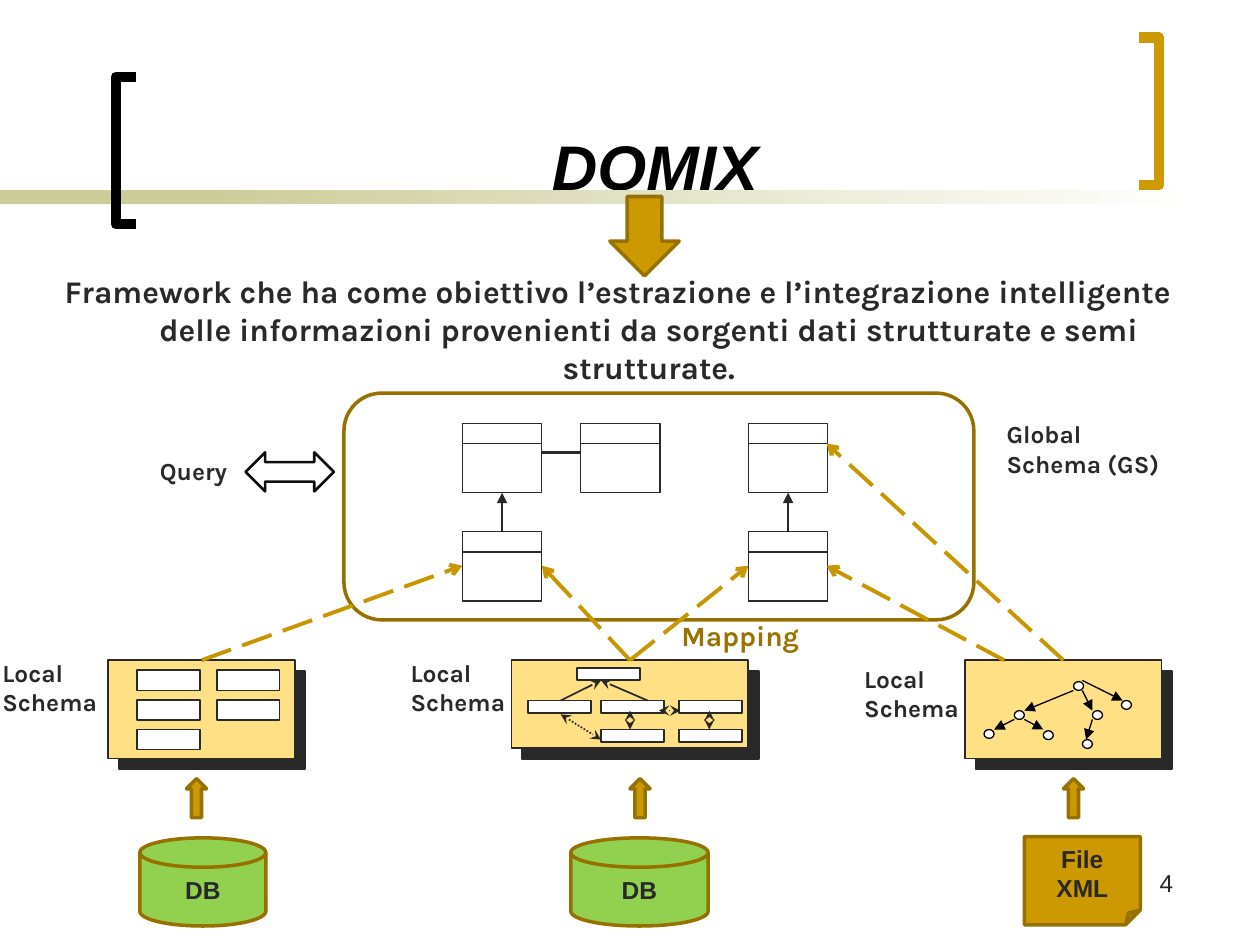
from lxml import etree
from pptx import Presentation
from pptx.dml.color import RGBColor
from pptx.enum.shapes import MSO_CONNECTOR, MSO_SHAPE
from pptx.enum.text import MSO_ANCHOR, MSO_AUTO_SIZE, PP_ALIGN
from pptx.oxml import parse_xml
from pptx.oxml.ns import nsdecls, qn
from pptx.util import Inches, Pt

RECTANGLE, NODE = MSO_SHAPE.RECTANGLE, MSO_SHAPE.FLOWCHART_CONNECTOR
DISK, NOTE = MSO_SHAPE.FLOWCHART_MAGNETIC_DISK, MSO_SHAPE.FOLDED_CORNER
ROUNDED, UP_ARROW = MSO_SHAPE.ROUNDED_RECTANGLE, MSO_SHAPE.UP_ARROW
DOWN_ARROW, DOUBLE_ARROW = MSO_SHAPE.DOWN_ARROW, MSO_SHAPE.LEFT_RIGHT_ARROW
STRAIGHT = MSO_CONNECTOR.STRAIGHT
LEFT, CENTER, RIGHT = PP_ALIGN.LEFT, PP_ALIGN.CENTER, PP_ALIGN.RIGHT
MIDDLE, BOTTOM = MSO_ANCHOR.MIDDLE, MSO_ANCHOR.BOTTOM
FIT_SHAPE = MSO_AUTO_SIZE.SHAPE_TO_FIT_TEXT

INK, BLACK, WHITE = "292929", "000000", "FFFFFF"
GOLD, DARK_GOLD, MAPPING_GOLD = "CC9900", "977100", "C89600"
SAND, PANEL, GREEN = "CCCC99", "FFE085", "92D050"
CLASS_WIDTH, CLASS_HEIGHT, CLASS_HEADER = 0.63, 0.55, 0.16


def color(value):
    return RGBColor.from_string(value)


def inches(*lengths):
    return [Inches(length) for length in lengths]


def write(frame, text, size, font="Arial", fill=INK, align=LEFT, **styles):
    """Put one paragraph per line of text into the frame."""
    frame.text = text
    formats = {"size": Pt(size), "name": font, "bold": True, **styles}
    for paragraph in frame.paragraphs:
        paragraph.alignment = align
        for run in paragraph.runs:
            for name, value in formats.items():
                setattr(run.font, name, value)
            run.font.color.rgb = color(fill)


def add_shape(slide, kind, box, fill=WHITE, line=INK, width=1):
    shape = slide.shapes.add_shape(kind, *inches(*box))
    shape.shadow.inherit = False
    shape.fill.solid()
    shape.fill.fore_color.rgb = color(fill)
    if line:
        shape.line.color.rgb = color(line)
        shape.line.width = Pt(width)
    else:
        shape.line.fill.background()
    return shape


def add_line(slide, start, end, line=INK, width=0.75, dash=None, head=None, tail=None):
    connector = slide.shapes.add_connector(STRAIGHT, *inches(*start, *end))
    connector.line.color.rgb = color(line)
    connector.line.width = Pt(width)
    outline = connector.line._get_or_add_ln()
    for tag, key, value in (("prstDash", "val", dash), ("headEnd", "type", head),
                            ("tailEnd", "type", tail)):
        if value:
            etree.SubElement(outline, qn(f"a:{tag}")).set(key, value)
    etree.SubElement(connector._element.spPr, qn("a:effectLst"))


def add_label(slide, box, text, size=14, fill=INK):
    label = slide.shapes.add_textbox(*inches(*box))
    label.text_frame.word_wrap = False
    label.text_frame.auto_size = FIT_SHAPE
    write(label.text_frame, text, size, "Karla", fill)


def add_bracket(slide, box, line, opens_right):
    left, top, width, height = box
    spine, tip = (left, left + width) if opens_right else (left + width, left)
    builder = slide.shapes.build_freeform(*inches(tip, top), scale=1.0)
    corners = [(spine, top), (spine, top + height), (tip, top + height)]
    builder.add_line_segments([inches(*corner) for corner in corners], close=False)
    bracket = builder.convert_to_shape()
    bracket.shadow.inherit = False
    bracket.fill.background()
    bracket.line.color.rgb = color(line)
    bracket.line.width = Pt(6)


def add_heading(slide):
    add_shape(slide, RECTANGLE, (0, 1.51, 2.33, 0.11), SAND, None)
    fade = add_shape(slide, RECTANGLE, (1.58, 1.51, 7.92, 0.11), SAND, None)
    fade.fill.gradient()
    fade.fill.gradient_angle = 0
    for stop, value in zip(fade.fill.gradient_stops, (SAND, WHITE)):
        stop.color.rgb = color(value)
    add_bracket(slide, (0.92, 0.61, 0.16, 1.17), BLACK, True)
    add_bracket(slide, (9.04, 0.3, 0.16, 1.17), GOLD, False)
    title = slide.shapes.title
    title.left, title.top, title.width, title.height = inches(1.02, 0.11, 8.36, 1.55)
    title.text_frame.vertical_anchor = BOTTOM
    write(title.text_frame, "DOMIX", 36, fill=BLACK, align=CENTER, italic=True)


def add_statement(slide, box):
    statement = slide.shapes.add_textbox(*inches(*box))
    statement.text_frame.word_wrap = True
    write(statement.text_frame,
          "Framework che ha come obiettivo l’estrazione e l’integrazione intelligente "
          "delle informazioni provenienti da sorgenti dati strutturate e semi strutturate.",
          18, "Karla", align=CENTER)
    properties = statement.text_frame.paragraphs[0]._p.get_or_add_pPr()
    properties.set("marL", str(Inches(0.49)))
    properties.set("indent", str(Inches(-0.49)))


def add_class(slide, left, top):
    add_shape(slide, RECTANGLE, (left, top, CLASS_WIDTH, CLASS_HEIGHT), width=0.75)
    divider = top + CLASS_HEADER
    add_line(slide, (left, divider), (left + CLASS_WIDTH, divider))


def add_global_schema(slide, box):
    left, top, width, height = box
    add_shape(slide, ROUNDED, box, line=DARK_GOLD, width=2)
    parent_top, child_top = top + 0.24, top + 1.1
    for class_left in (left + 0.94, left + 3.21):
        add_class(slide, class_left, parent_top)
        add_class(slide, class_left, child_top)
        middle = class_left + CLASS_WIDTH / 2
        add_line(slide, (middle, child_top), (middle, parent_top + CLASS_HEIGHT),
                 tail="triangle")
    add_class(slide, left + 1.88, parent_top)
    add_line(slide, (left + 1.57, top + 0.47), (left + 1.88, top + 0.47), width=2)
    add_label(slide, (left + width + 0.16, top + 0.16, 1.49, 0.57), "Global\nSchema (GS)")
    add_label(slide, (left - 1.56, top + 0.45, 0.79, 0.34), "Query")
    add_shape(slide, DOUBLE_ARROW, (left - 0.78, top + 0.47, 0.7, 0.31),
              line="0D0D0D", width=1.5)


def add_panel(slide, box):
    """Add a local schema panel with a hard shadow at its lower right."""
    panel = add_shape(slide, RECTANGLE, box, PANEL)
    properties = panel._element.spPr
    properties.remove(properties.find(qn("a:effectLst")))
    properties.append(parse_xml(
        f'<a:effectLst {nsdecls("a")}><a:outerShdw dist="{Pt(8.5)}" dir="2700000" '
        f'algn="ctr" rotWithShape="0"><a:srgbClr val="{INK}"/></a:outerShdw></a:effectLst>'))


def add_relational_schema(slide, box):
    left, top = box[:2]
    add_panel(slide, box)
    for column, row in ((0, 0), (0, 1), (0, 2), (1, 0), (1, 1)):
        add_shape(slide, RECTANGLE,
                  (left + 0.23 + 0.63 * column, top + 0.08 + 0.235 * row, 0.5, 0.16))


def add_object_schema(slide, box):
    left, top = box[:2]
    add_panel(slide, box)
    for x, y in ((0.52, 0.06), (0.13, 0.32), (0.71, 0.32), (1.33, 0.32),
                 (0.71, 0.55), (1.33, 0.55)):
        add_shape(slide, RECTANGLE, (left + x, top + y, 0.5, 0.1))
    for x in (0.39, 1.08):
        add_line(slide, (left + x, top + 0.32), (left + 0.71, top + 0.16),
                 width=1, tail="stealth")
    for x1, y1, x2, y2 in ((0.39, 0.43, 0.71, 0.63), (0.94, 0.4, 0.94, 0.55),
                           (1.17, 0.4, 1.34, 0.4), (1.57, 0.4, 1.57, 0.55)):
        add_line(slide, (left + x1, top + y1), (left + x2, top + y2),
                 width=1, dash="sysDot", head="stealth", tail="stealth")


def add_tree_schema(slide, box):
    left, top = box[:2]
    add_panel(slide, box)
    for x, y in ((0.86, 0.17), (0.39, 0.4), (1.01, 0.4), (1.24, 0.32),
                 (0.15, 0.55), (0.62, 0.56), (0.93, 0.63)):
        add_shape(slide, NODE, (left + x, top + y, 0.08, 0.07), line=BLACK, width=0.75)
    for x1, y1, x2, y2 in ((0.86, 0.24, 0.47, 0.4), (0.93, 0.24, 1.01, 0.4),
                           (0.93, 0.16, 1.25, 0.32), (1.01, 0.47, 0.96, 0.63),
                           (0.39, 0.47, 0.23, 0.55), (0.47, 0.47, 0.62, 0.55)):
        add_line(slide, (left + x1, top + y1), (left + x2, top + y2), BLACK, tail="triangle")


def add_source(slide, kind, box, text, fill, arrow_left):
    source = add_shape(slide, kind, box, fill, DARK_GOLD, 2)
    source.text_frame.word_wrap = True
    source.text_frame.vertical_anchor = MIDDLE
    write(source.text_frame, text, 14, align=CENTER)
    add_shape(slide, UP_ARROW, (arrow_left, 6.18, 0.16, 0.31), GOLD, DARK_GOLD, 2)


def add_mappings(slide):
    for start, end in ((1.6, (3.67, 4.49)), (5, (4.3, 4.49)), (5, (5.94, 4.49)),
                       (8.44, (6.56, 3.52)), (7.97, (6.56, 4.49))):
        add_line(slide, (start, 5.24), end, MAPPING_GOLD, 2.25, "lgDash", tail="arrow")
    add_label(slide, (5.31, 4.86, 1.17, 0.37), "Mapping", 16, "997300")


def main():
    presentation = Presentation()
    presentation.slide_width, presentation.slide_height = inches(10, 7.5)
    slide = presentation.slides.add_slide(presentation.slide_layouts[5])
    add_heading(slide)
    add_global_schema(slide, (2.73, 3.12, 5, 1.8))
    add_statement(slide, (0.39, 2.11, 9.03, 1))
    add_shape(slide, DOWN_ARROW, (4.84, 1.56, 0.55, 0.63), GOLD, DARK_GOLD, 2)
    add_relational_schema(slide, (0.86, 5.24, 1.48, 0.78))
    add_object_schema(slide, (4.06, 5.24, 1.88, 0.7))
    add_tree_schema(slide, (7.66, 5.24, 1.56, 0.78))
    for left, top in ((-0.08, 5.17), (3.16, 5.17), (6.76, 5.22)):
        add_label(slide, (left, top, 0.98, 0.57), "Local\nSchema")
    add_mappings(slide)
    add_source(slide, DISK, (1.11, 6.65, 1, 0.7), "DB", GREEN, 1.48)
    add_source(slide, DISK, (4.53, 6.65, 1.09, 0.7), "DB", GREEN, 5)
    add_source(slide, NOTE, (8.13, 6.64, 0.92, 0.7), "File XML", GOLD, 8.44)
    number = slide.shapes.add_textbox(*inches(7.33, 6.84, 2.08, 0.5))
    write(number.text_frame, "4", 14, align=RIGHT, bold=False)
    number.text_frame.word_wrap = True
    presentation.save("out.pptx")


if __name__ == "__main__":
    main()
